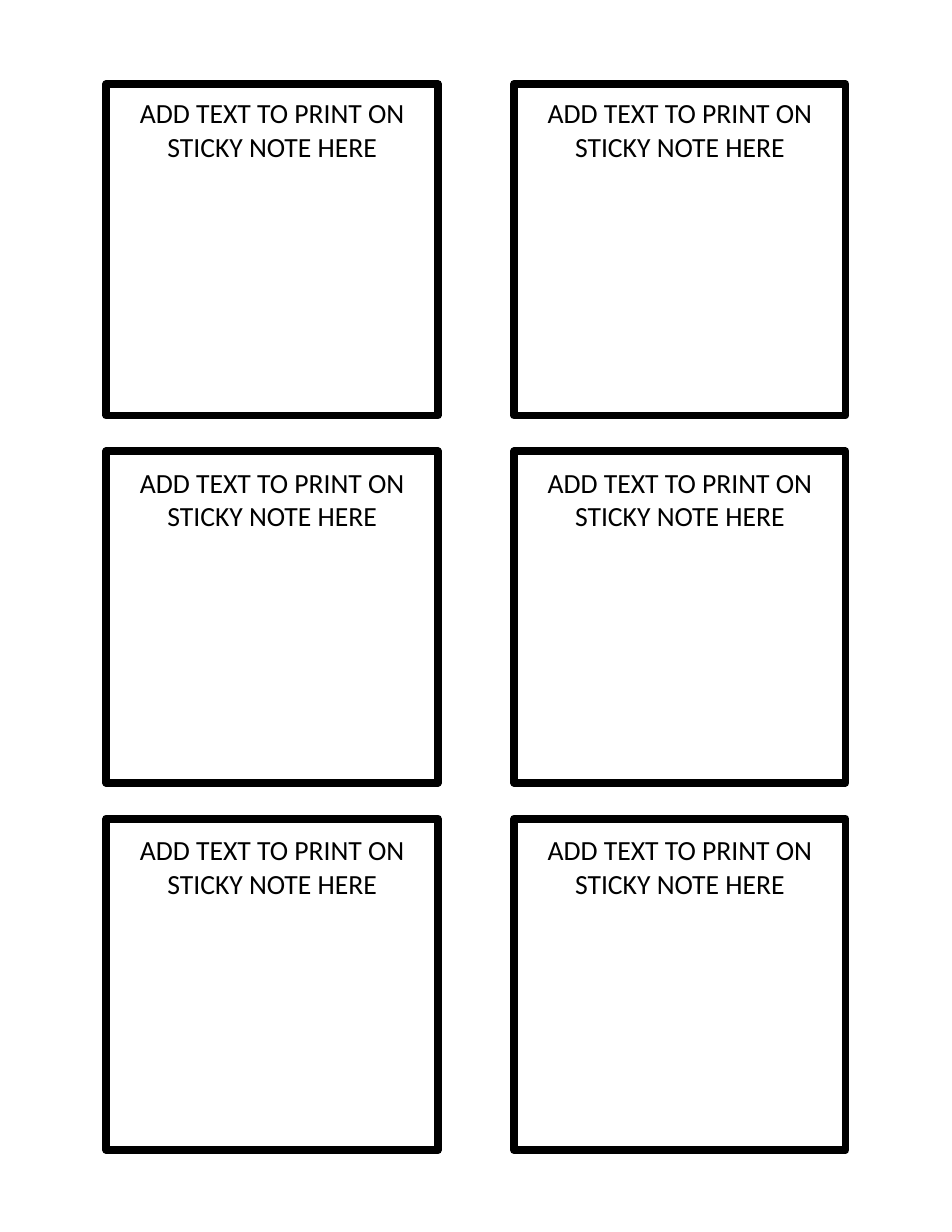
from dataclasses import dataclass
from itertools import product

from pptx import Presentation, util as u
from pptx.dml.color import RGBColor
from pptx.enum import shapes, text


@dataclass(frozen=True)
class Theme:
    ink: str = "000000"
    paper: str = "FFFFFF"
    font: str = "Calibri"
    size: float = 17.8
    line: float = 5


@dataclass(frozen=True)
class Grid:
    left: float = 0.95
    top: float = 0.75
    side: float = 2.96
    col: float = 3.64
    row: float = 3.28

    def spot(self, col, row):
        return self.left + col * self.col, self.top + row * self.row


def write(frame, words, font, size, color, align=text.PP_ALIGN.CENTER):
    frame.word_wrap = True
    para = frame.paragraphs[0]
    para.alignment = align
    run = para.add_run()
    run.text = words
    run.font.name = font
    run.font.size = u.Pt(size)
    run.font.color.rgb = RGBColor.from_string(color)


class Sheet:
    def __init__(self, slide, theme, grid):
        self.slide, self.theme, self.grid = slide, theme, grid
        fill = slide.background.fill
        fill.solid()
        fill.fore_color.rgb = RGBColor.from_string(theme.paper)

    def frame(self, col, row):
        """Draw the square outline of one note."""
        x, y = self.grid.spot(col, row)
        side = u.Inches(self.grid.side)
        box = self.slide.shapes.add_shape(
            shapes.MSO_SHAPE.RECTANGLE, u.Inches(x), u.Inches(y), side, side)
        box.shadow.inherit = False
        box.fill.background()
        box.line.color.rgb = RGBColor.from_string(self.theme.ink)
        box.line.width = u.Pt(self.theme.line)

    def label(self, col, row, words, drop, high=0.7):
        """Place text a little below the top of one note."""
        x, y = self.grid.spot(col, row)
        box = self.slide.shapes.add_textbox(
            u.Inches(x), u.Inches(y + drop),
            u.Inches(self.grid.side), u.Inches(high))
        look = self.theme
        write(box.text_frame, words, font=look.font, size=look.size,
              color=look.ink)
        box.text_frame.auto_size = text.MSO_AUTO_SIZE.SHAPE_TO_FIT_TEXT


def main():
    deck = Presentation()
    deck.slide_width, deck.slide_height = u.Inches(8.5), u.Inches(11)
    sheet = Sheet(deck.slides.add_slide(deck.slide_layouts[6]), Theme(), Grid())

    # Note outlines, column by column
    for col, row in product(range(2), range(3)):
        sheet.frame(col, row)

    # Note texts, row by row
    drops = (0.06, 0.08, 0.08)
    for row, col in product(range(3), range(2)):
        sheet.label(col, row, "ADD TEXT TO PRINT ON STICKY NOTE HERE", drops[row])

    deck.save("out.pptx")


if __name__ == "__main__":
    main()
